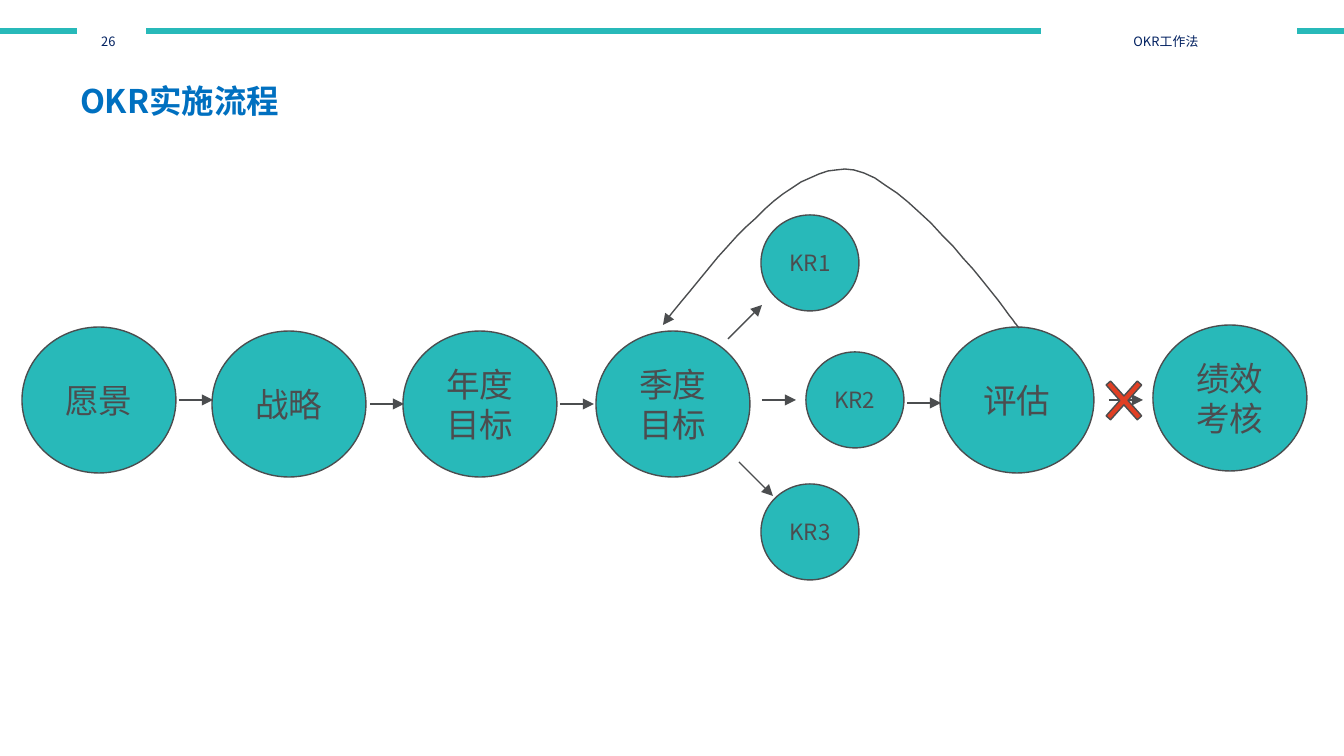
from lxml.etree import SubElement
from pptx import Presentation
from pptx.dml.color import RGBColor
from pptx.enum.shapes import MSO_CONNECTOR, MSO_SHAPE
from pptx.enum.text import MSO_ANCHOR, PP_ALIGN
from pptx.oxml.ns import qn
from pptx.util import Pt

FONT = "Noto Sans CJK SC"
HUES = {"teal": "28B9B9", "gray": "4B4D4F", "navy": "002060",
        "blue": "0070C0", "red": "E03F24", "white": "FFFFFF"}
UNIT = 914400 / 134.4  # EMU in one px


def emu(*vals):
    return [round(v * UNIT) for v in vals]


def hue(name):
    return RGBColor.from_string(HUES[name])


def write(shape, text, size=18, color="gray", bold=False, drop=0,
          align=PP_ALIGN.CENTER, anchor=MSO_ANCHOR.MIDDLE, pad=13, right=None, lead=1.0):
    frame = shape.text_frame
    frame.word_wrap = True
    frame.vertical_anchor = anchor
    frame.margin_left, frame.margin_right = emu(pad, pad if right is None else right)
    para = frame.paragraphs[0]
    para.alignment = align
    para.line_spacing = lead
    run = para.add_run()
    run.text = text
    run.font.size = Pt(size)
    run.font.bold = bold
    run.font.color.rgb = hue(color)
    run.font.name = FONT
    props = run.font._element
    SubElement(props, qn("a:ea")).set("typeface", FONT)
    if drop:
        props.set("baseline", str(-1000 * drop))


def curve(a, b, c, d, steps=20):
    """Points along a cubic curve, without its start."""
    for i in range(1, steps + 1):
        t = i / steps
        u = 1 - t
        yield tuple(u**3 * p + 3 * u * u * t * q + 3 * u * t * t * r + t**3 * s
                    for p, q, r, s in zip(a, b, c, d))


class Board:
    def __init__(self, slide):
        self.slide = slide
        self.shapes = slide.shapes

    def paint(self, shape, fill, line="gray"):
        shape.shadow.inherit = False
        if fill:
            shape.fill.solid()
            shape.fill.fore_color.rgb = hue(fill)
        else:
            shape.fill.background()
        self.ink(shape, line)

    def ink(self, shape, color="gray", width=0.75):
        shape.line.color.rgb = hue(color)
        shape.line.width = Pt(width)

    def tip(self, shape, end):
        line = shape.line._get_or_add_ln()
        SubElement(line, qn(f"a:{end}End")).set("type", "triangle")

    def form(self, kind, box, fill, line="gray"):
        shape = self.shapes.add_shape(kind, *emu(*box))
        self.paint(shape, fill, line)
        return shape

    def disc(self, x, y, text, wide=154, high=146, **style):
        write(self.form(MSO_SHAPE.OVAL, (x, y, wide, high), "teal"), text, **style)

    def label(self, box, text):
        shape = self.form(MSO_SHAPE.RECTANGLE, box, "white", "white")
        write(shape, text, size=12, color="navy", drop=25,
              anchor=MSO_ANCHOR.TOP, right=19)

    def title(self, box, text):
        write(self.shapes.add_textbox(*emu(*box)), text, size=30, color="blue",
              bold=True, drop=25, align=PP_ALIGN.LEFT, lead=0.9)

    def rule(self, x, y, dx, dy=0, color="gray", width=0.75):
        line = self.shapes.add_connector(
            MSO_CONNECTOR.STRAIGHT, *emu(x, y, x + dx, y + dy))
        self.ink(line, color, width)
        SubElement(line._element.spPr, qn("a:effectLst"))
        return line

    def arrow(self, x, y, dx=34, dy=0):
        self.tip(self.rule(x, y, dx, dy), "tail")

    def loop(self, start, points):
        path = self.shapes.build_freeform(*start, scale=UNIT)
        path.add_line_segments(points, close=False)
        shape = path.convert_to_shape()
        self.paint(shape, None)
        self.tip(shape, "head")


def main():
    deck = Presentation()
    deck.slide_width, deck.slide_height = emu(1344, 756)
    board = Board(deck.slides.add_slide(deck.slide_layouts[6]))

    # Header band and title
    board.rule(0, 31, 1344, color="teal", width=3)
    board.label((78, 12, 67, 40), "26")
    board.label((1042, 12, 254, 40), "OKR工作法")
    board.title((67, 38, 793, 82), "OKR实施流程")

    # Main steps
    for x, y, text in [(22, 327, "愿景"), (212, 331, "战略"), (403, 331, "年度目标"),
                       (596, 331, "季度目标"), (940, 327, "评估"), (1153, 325, "绩效考核")]:
        board.disc(x, y, text)

    # Key results
    for x, y, text in [(761, 215, "KR1"), (806, 352, "KR2"), (761, 484, "KR3")]:
        board.disc(x, y, text, wide=98, high=96, size=12, pad=5)

    # Arrows between steps
    for x, y in [(179, 400), (370, 404), (560, 404), (762, 400), (907, 403), (1109, 400)]:
        board.arrow(x, y)
    board.arrow(728, 339, dy=-34)
    board.arrow(739, 462, dy=34)

    # Cross over the last arrow
    cross = board.form(MSO_SHAPE.MATH_MULTIPLY, (1094, 367, 60, 67), "red")
    cross.adjustments[0] = 0.1

    # Loop back from review to quarter goals
    start, peak, end = (663, 325), (845, 169), (1016, 324)
    board.loop(start, [*curve(start, (724, 247), (788, 169), peak),
                       *curve(peak, (904, 168), end, end), (1019, 328)])

    deck.save("out.pptx")


if __name__ == "__main__":
    main()
